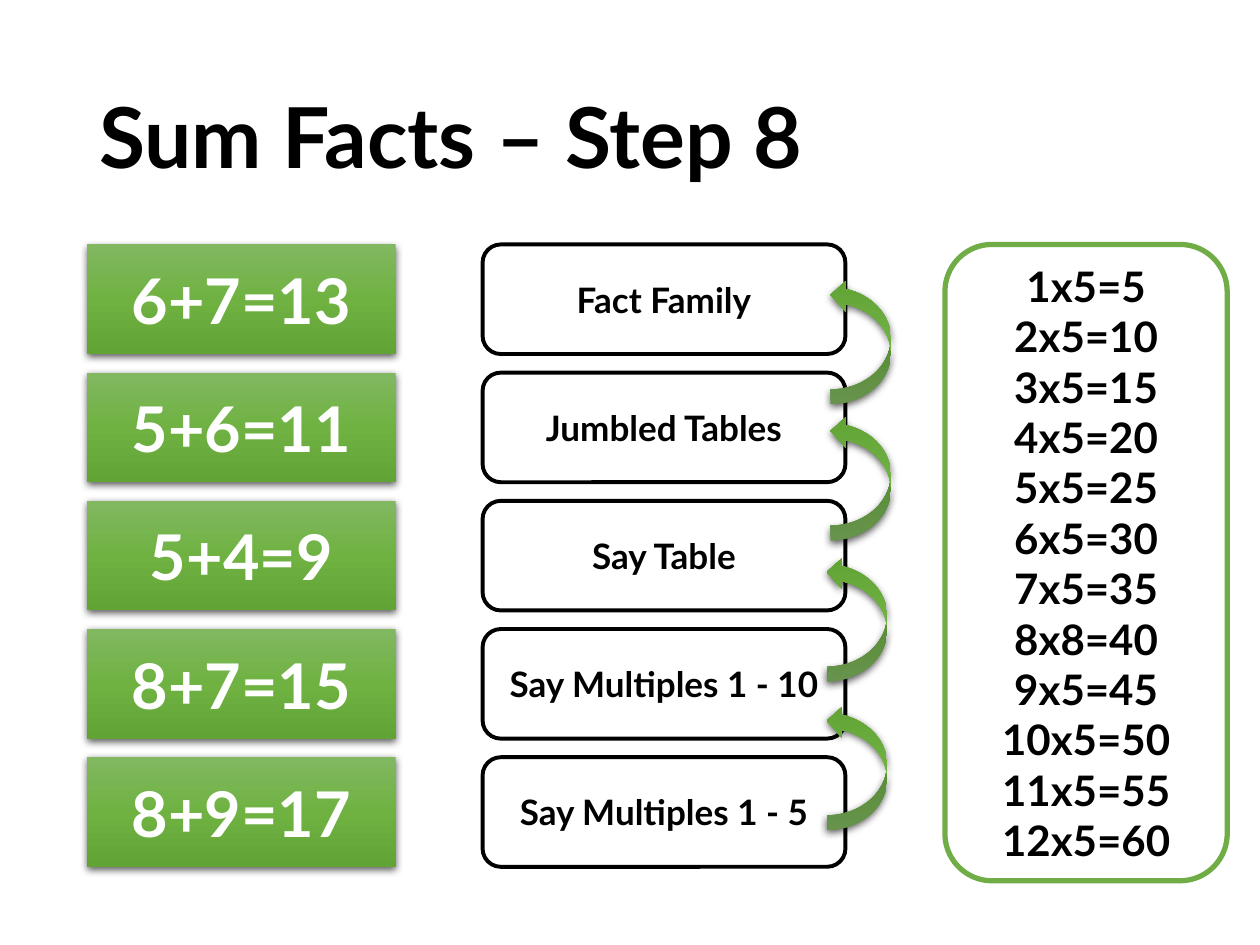
from pptx import Presentation
from pptx.dml.color import RGBColor
from pptx.enum.shapes import MSO_SHAPE as Shape
from pptx.enum.text import MSO_ANCHOR as Anchor, PP_ALIGN as Align
from pptx.oxml import parse_xml
from pptx.oxml.ns import nsdecls, qn
from pptx.util import Inches, Pt

COLORS = {
    "black": "000000",
    "white": "FFFFFF",
    "border": "70AD47",
    "light": "81B861",
    "middle": "6FB242",
    "dark": "62A336",
}
GRADIENT = [(0, "light"), (50, "middle"), (100, "dark")]
SUMS = ["6+7=13", "5+6=11", "5+4=9", "8+7=15", "8+9=17"]
STAGES = ["Fact Family", "Jumbled Tables", "Say Table",
          "Say Multiples 1 - 10", "Say Multiples 1 - 5"]
ARROW_OFFSETS = [(2.76, 0.28), (2.76, 1.36), (2.73, 2.48), (2.73, 3.66)]
TIMES_TABLE = ["1x5=5", "2x5=10", "3x5=15", "4x5=20", "5x5=25", "6x5=30",
               "7x5=35", "8x8=40", "9x5=45", "10x5=50", "11x5=55", "12x5=60"]
ROW_HEIGHT = 0.87


def rgb(name):
    return RGBColor.from_string(COLORS[name])


def write(shape, lines, size, color, align=Align.CENTER, spacing=None):
    frame = shape.text_frame
    frame.text = "\n".join(lines)
    frame.word_wrap = True
    frame.vertical_anchor = Anchor.MIDDLE
    for paragraph in frame.paragraphs:
        paragraph.alignment = align
        paragraph.line_spacing = spacing
        font = paragraph.runs[0].font
        for name, value in {"name": "Lato", "size": Pt(size), "bold": True}.items():
            setattr(font, name, value)
        font.color.rgb = rgb(color)


def add_outlined(shapes, box, border, width):
    shape = shapes.add_shape(Shape.ROUNDED_RECTANGLE, *map(Inches, box))
    shape.shadow.inherit = False
    shape.fill.solid()
    shape.fill.fore_color.rgb = rgb("white")
    shape.line.color.rgb = rgb(border)
    shape.line.width = Pt(width)
    return shape


def add_glossy(shapes, kind, box):
    shape = shapes.add_shape(kind, *map(Inches, box))
    shape.line.fill.background()
    shape.fill.gradient()
    properties = shape._element.spPr
    gradient = properties.find(qn("a:gradFill"))
    stops = "".join(
        f'<a:gs pos="{position * 1000}"><a:srgbClr val="{COLORS[color]}"/></a:gs>'
        for position, color in GRADIENT)
    gradient.replace(gradient.find(qn("a:gsLst")),
                     parse_xml(f'<a:gsLst {nsdecls("a")}>{stops}</a:gsLst>'))
    gradient.find(qn("a:lin")).set("ang", "5400000")
    shape.shadow.inherit = False
    properties.find(qn("a:effectLst")).append(parse_xml(
        f'<a:outerShdw {nsdecls("a")} blurRad="{Pt(4.5)}" dist="{Pt(1.5)}" '
        f'dir="5400000" algn="ctr" rotWithShape="0">'
        f'<a:srgbClr val="{COLORS["black"]}"><a:alpha val="63000"/></a:srgbClr>'
        f'</a:outerShdw>'))
    return shape


def stack(box, count):
    left, top, width, height = box
    step = (height - ROW_HEIGHT) / (count - 1)
    return [(left, top + row * step, width, ROW_HEIGHT) for row in range(count)]


def add_title(slide, box):
    title = slide.shapes.add_textbox(*map(Inches, box))
    write(title, ["Sum Facts – Step 8"], 48, "black", Align.LEFT, 0.9)


def add_stages(slide, box):
    shapes = slide.shapes.add_group_shape().shapes
    for label, cell in zip(STAGES, stack(box, len(STAGES))):
        write(add_outlined(shapes, cell, "black", 2.25), [label], 20, "black")
    left, top = box[:2]
    for x, y in ARROW_OFFSETS:
        arrow = add_glossy(shapes, Shape.CURVED_RIGHT_ARROW,
                           (left + x, top + y, 0.48, 0.99))
        arrow.rotation = 180


def add_sums(slide, box):
    shapes = slide.shapes.add_group_shape().shapes
    for label, cell in zip(SUMS, stack(box, len(SUMS))):
        write(add_glossy(shapes, Shape.RECTANGLE, cell), [label], 36, "white")


def add_times_table(slide, box):
    panel = add_outlined(slide.shapes, box, "border", 3)
    write(panel, TIMES_TABLE, 24, "black")


def main():
    presentation = Presentation()
    presentation.slide_width = Inches(10)
    presentation.slide_height = Inches(7.5)
    slide = presentation.slides.add_slide(presentation.slide_layouts[6])
    add_title(slide, (0.69, 0.4, 8.62, 1.45))
    add_stages(slide, (3.83, 1.94, 2.88, 4.94))
    add_sums(slide, (0.69, 1.94, 2.45, 4.94))
    add_times_table(slide, (7.5, 1.94, 2.24, 5.05))
    presentation.save("out.pptx")


if __name__ == "__main__":
    main()
